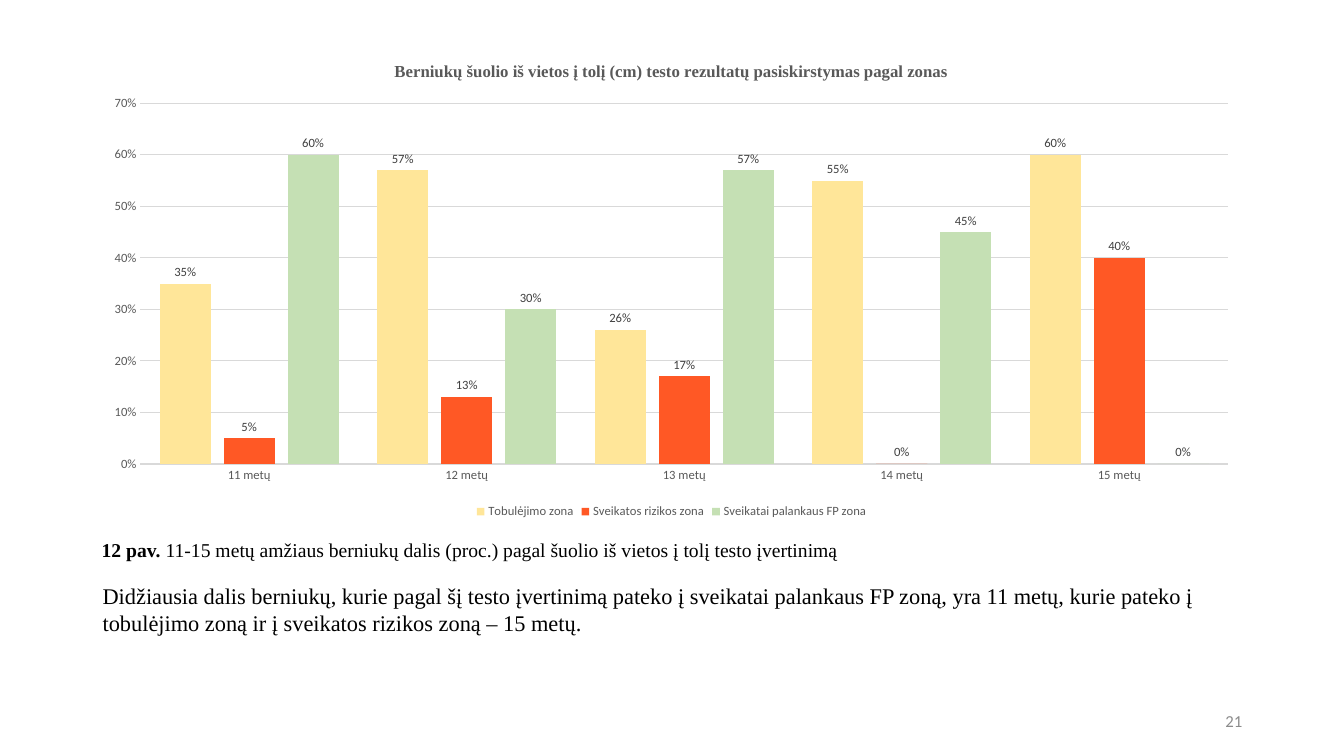
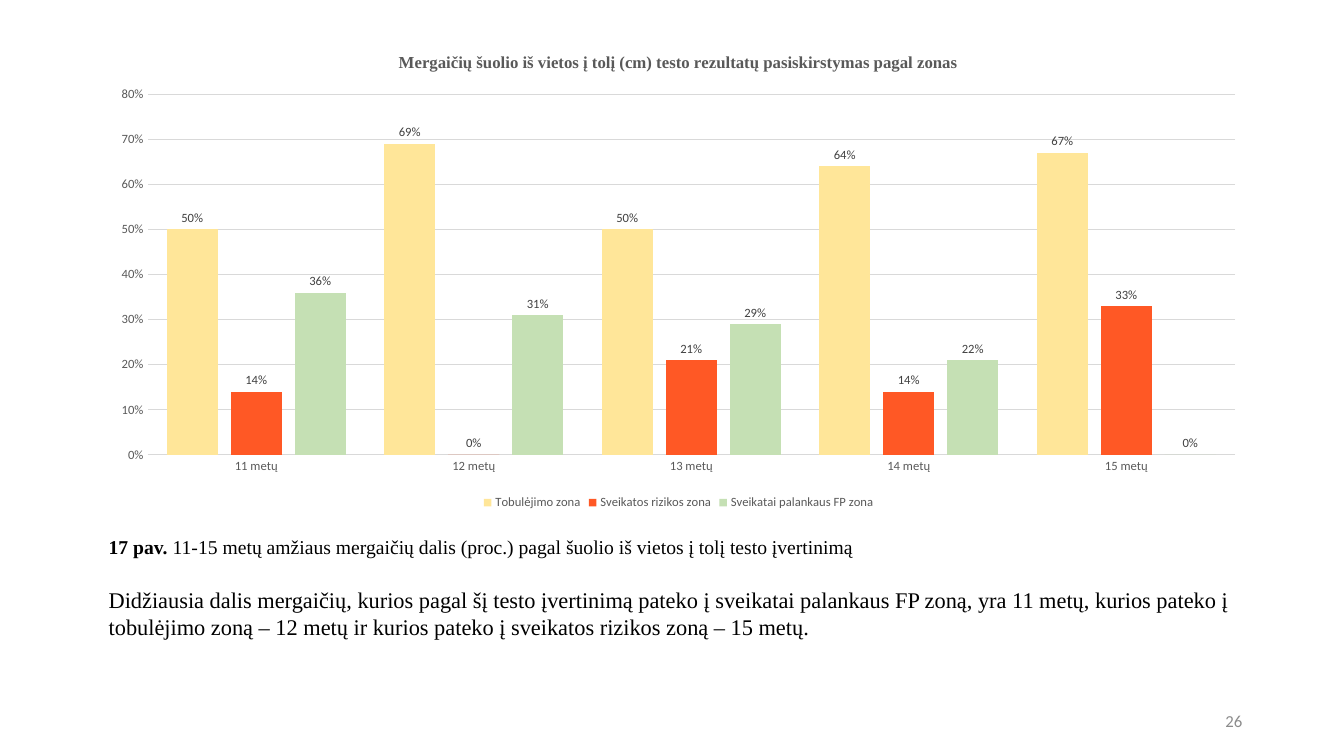
from lxml import etree
from pptx import Presentation
from pptx import util as u
from pptx.chart.data import CategoryChartData
from pptx.dml.color import RGBColor
from pptx.enum import chart as ch
from pptx.enum import text as t
from pptx.oxml.ns import qn

COLORS = {
    "black": "000000", "axis": "595959", "label": "404040",
    "grid": "D9D9D9", "number": "8C8C8C",
    "improving": "FFE699", "risk": "FF5825", "healthy": "C5E0B4",
}
SERIF, SANS = "Times New Roman", "Calibri"
WIDTH, CHART_HEIGHT = 11.5, 4.76
AGES = [f"{age} metų" for age in range(11, 16)]
ZONES = [
    ("Tobulėjimo zona", "improving"),
    ("Sveikatos rizikos zona", "risk"),
    ("Sveikatai palankaus FP zona", "healthy"),
]
# Inner plot area as fractions of the chart frame
PLOT_LAYOUT = {"x": 0.042, "y": 0.125, "w": 0.938, "h": 0.752}


def rgb(name):
    return RGBColor.from_string(COLORS[name])


def style_font(font, size, color, face=SANS, bold=False):
    font.size, font.name, font.bold = u.Pt(size), face, bold
    font.color.rgb = rgb(color)


def add_text(slide, box, text, size, color="black", face=SERIF, lead="",
             align=t.PP_ALIGN.LEFT, anchor=t.MSO_ANCHOR.TOP, spacing=1.0):
    """Add a text box; lead is bold text placed before the main text."""
    frame = slide.shapes.add_textbox(*map(u.Inches, box)).text_frame
    frame.word_wrap = True
    frame.vertical_anchor = anchor
    paragraph = frame.paragraphs[0]
    paragraph.alignment, paragraph.line_spacing = align, spacing
    for part, bold in ((lead, True), (text, False)):
        if part:
            run = paragraph.add_run()
            run.text = part
            style_font(run.font, size, color, face, bold)


def fix_plot_area(chart):
    plot_area = chart.plots[0]._element.getparent()
    layout = plot_area.find(qn("c:layout"))
    if layout is None:
        layout = etree.Element(qn("c:layout"))
        plot_area.insert(0, layout)
    manual = etree.SubElement(layout, qn("c:manualLayout"))
    settings = {"layoutTarget": "inner", "xMode": "edge", "yMode": "edge", **PLOT_LAYOUT}
    for tag, value in settings.items():
        etree.SubElement(manual, qn(f"c:{tag}")).set("val", str(value))


def style_axes(chart, maximum):
    ages, shares = chart.category_axis, chart.value_axis
    for axis in (ages, shares):
        axis.major_tick_mark = axis.minor_tick_mark = ch.XL_TICK_MARK.NONE
        style_font(axis.tick_labels.font, 9, "axis")
    shares.minimum_scale, shares.maximum_scale, shares.major_unit = 0, maximum, 0.1
    shares.tick_labels.number_format = "0%"
    shares.tick_labels.number_format_is_linked = False
    shares.format.line.fill.background()
    shares.has_major_gridlines = True
    for line in (ages.format.line, shares.major_gridlines.format.line):
        line.color.rgb, line.width = rgb("grid"), u.Pt(0.75)


def style_zone(series, color):
    series.format.fill.solid()
    series.format.fill.fore_color.rgb = rgb(color)
    series.invert_if_negative = False
    labels = series.data_labels
    labels.show_value = True
    labels.number_format, labels.number_format_is_linked = "0%", False
    labels.position = ch.XL_LABEL_POSITION.OUTSIDE_END
    style_font(labels.font, 9, "label")


def override_label(series, index, text):
    label = series.points[index].data_label
    run = label.text_frame.paragraphs[0].add_run()
    run.text = text
    style_font(run.font, 9, "label")
    label.position = ch.XL_LABEL_POSITION.OUTSIDE_END


def add_zone_chart(slide, left, top, title, shares, maximum, overrides):
    data = CategoryChartData(number_format="0%")
    data.categories = AGES
    for (zone, _), values in zip(ZONES, shares):
        data.add_series(zone, values)
    box = map(u.Inches, (left, top, WIDTH, CHART_HEIGHT))
    chart = slide.shapes.add_chart(ch.XL_CHART_TYPE.COLUMN_CLUSTERED, *box, data).chart
    style_font(chart.font, 10, "black")

    chart.has_title = True
    chart.chart_title.include_in_layout = False
    heading = chart.chart_title.text_frame.paragraphs[0].add_run()
    heading.text = title
    style_font(heading.font, 12, "axis", SERIF, True)

    chart.has_legend = True
    chart.legend.position = ch.XL_LEGEND_POSITION.BOTTOM
    chart.legend.include_in_layout = False
    style_font(chart.legend.font, 9, "axis")

    plot = chart.plots[0]
    plot.gap_width, plot.overlap, plot.vary_by_categories = 75, -25, False
    fix_plot_area(chart)
    style_axes(chart, maximum)
    for series, (_, color) in zip(plot.series, ZONES):
        style_zone(series, color)
    for zone, age, text in overrides:
        override_label(plot.series[zone], age, text)


def add_result_slide(prs, left, chart_top, title, shares, maximum, caption_box,
                     figure, caption, body_box, body, number, overrides=()):
    slide = prs.slides.add_slide(prs.slide_layouts[6])
    add_zone_chart(slide, left, chart_top, title, shares, maximum, overrides)
    add_text(slide, caption_box, caption, 14, lead=figure,
             anchor=t.MSO_ANCHOR.MIDDLE, spacing=0.9)
    add_text(slide, body_box, body, 16)
    add_text(slide, (9.42, 6.95, 3, 0.4), number, 12, "number", SANS,
             align=t.PP_ALIGN.RIGHT, anchor=t.MSO_ANCHOR.MIDDLE)


def main():
    prs = Presentation()
    prs.slide_width, prs.slide_height = u.Inches(13.33), u.Inches(7.5)
    add_result_slide(
        prs, left=0.91, chart_top=0.43, maximum=0.7,
        title="Berniukų šuolio iš vietos į tolį (cm) testo rezultatų pasiskirstymas pagal zonas",
        shares=[(0.35, 0.57, 0.26, 0.55, 0.6),
                (0.05, 0.13, 0.17, 0, 0.4),
                (0.6, 0.3, 0.57, 0.45, 0)],
        caption_box=(0.91, 5.19, WIDTH, 0.55), figure="12 pav. ",
        caption="11-15 metų amžiaus berniukų dalis (proc.) pagal šuolio iš vietos "
                "į tolį testo įvertinimą",
        body_box=(0.92, 5.73, WIDTH, 0.64),
        body="Didžiausia dalis berniukų, kurie pagal šį testo įvertinimą pateko į sveikatai "
             "palankaus FP zoną, yra 11 metų, kurie pateko į tobulėjimo zoną ir į sveikatos "
             "rizikos zoną – 15 metų.",
        number="21")
    add_result_slide(
        prs, left=0.98, chart_top=0.34, maximum=0.8,
        title="Mergaičių šuolio iš vietos į tolį (cm) testo rezultatų pasiskirstymas pagal zonas",
        shares=[(0.5, 0.69, 0.5, 0.64, 0.67),
                (0.14, 0, 0.21, 0.14, 0.33),
                (0.36, 0.31, 0.29, 0.21, 0)],
        caption_box=(0.98, 5.23, WIDTH, 0.41), figure="17 pav. ",
        caption="11-15 metų amžiaus mergaičių dalis (proc.) pagal šuolio iš vietos "
                "į tolį testo įvertinimą",
        body_box=(0.98, 5.77, WIDTH, 0.64),
        body="Didžiausia dalis mergaičių, kurios pagal šį testo įvertinimą pateko į sveikatai "
             "palankaus FP zoną, yra 11 metų, kurios pateko į tobulėjimo zoną – 12 metų ir "
             "kurios pateko į sveikatos rizikos zoną – 15 metų.",
        number="26", overrides=[(2, 3, "22%")])
    prs.save("out.pptx")


if __name__ == "__main__":
    main()
